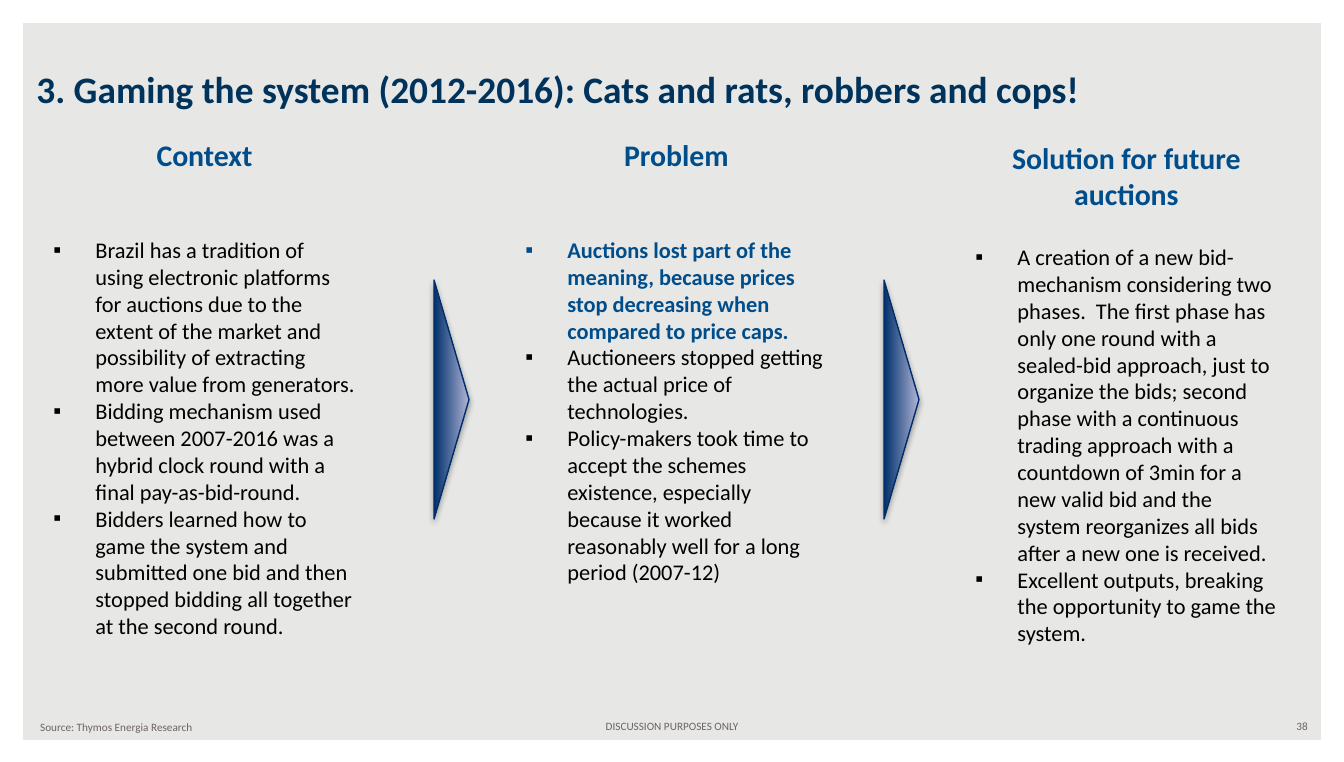
import dataclasses

import lxml.etree
import pptx
import pptx.dml.color
import pptx.enum.dml
import pptx.enum.shapes
import pptx.enum.text
import pptx.oxml.ns
import pptx.util

ALIGN = pptx.enum.text.PP_ALIGN
ANCHOR = pptx.enum.text.MSO_ANCHOR
EMU_PER_PX = 914400 / 134.4


@dataclasses.dataclass(frozen=True)
class Theme:
    font: str = "Calibri"
    background: str = "E7E7E5"
    frame: str = "FFFFFF"
    title: str = "00335C"
    accent: str = "004D8B"
    text: str = "000000"
    footer: str = "6C6463"
    arrow_dark: str = "002F6C"
    arrow_light: str = "AFB5D5"
    arrow_line: str = "002E6A"
    title_size: int = 20
    heading_size: int = 16
    list_size: int = 12
    footer_size: int = 6


THEME = Theme()
LIST_INDENT = 42

# heading, box, points between heading and list, bullets as (wording, emphasised)
COLUMNS = [
    ("Context", (40, 130, 329, 520), 34, [
        ("Brazil has a tradition of using electronic platforms for auctions due to the extent of "
         "the market and possibility of extracting more value from generators.", False),
        ("Bidding mechanism used between 2007-2016 was a hybrid clock round with a final "
         "pay-as-bid-round.", False),
        ("Bidders learned how to game the system and submitted one bid and then stopped bidding "
         "all together at the second round.", False),
    ]),
    ("Problem", (512, 130, 329, 466), 34, [
        ("Auctions lost part of the meaning, because prices stop decreasing when compared to "
         "price caps.", True),
        ("Auctioneers stopped getting the actual price of technologies.", False),
        ("Policy-makers took time to accept the schemes existence, especially because it worked "
         "reasonably well for a long period (2007-12)", False),
    ]),
    ("Solution for future auctions", (962, 133, 329, 524), 17, [
        ("A creation of a new bid-mechanism considering two phases.  The first phase has only one "
         "round with a sealed-bid approach, just to organize the bids; second phase with a "
         "continuous trading approach with a countdown of 3min for a new valid bid and the system "
         "reorganizes all bids after a new one is received.", False),
        ("Excellent outputs, breaking the opportunity to game the system.", False),
    ]),
]

FOOTERS = [
    ("Source: Thymos Energia Research", (27, 714, 426, 27), ALIGN.LEFT),
    ("DISCUSSION PURPOSES ONLY", (459, 713, 426, 27), ALIGN.CENTER),
    ("38", (1008, 713, 313, 27), ALIGN.RIGHT),
]


def px(length):
    return pptx.util.Emu(round(length * EMU_PER_PX))


def rgb(code):
    return pptx.dml.color.RGBColor.from_string(code)


def apply(target, formats):
    for name, value in formats.items():
        setattr(target, name, value)


def place(shape, box):
    apply(shape, dict(zip(("left", "top", "width", "height"), map(px, box))))


def write(paragraph, wording, size, color, bold=False, align=ALIGN.LEFT, space_before=0):
    run = paragraph.add_run()
    run.text = wording
    apply(paragraph, {"alignment": align, "space_before": pptx.util.Pt(space_before)})
    apply(run.font, {"name": THEME.font, "size": pptx.util.Pt(size), "bold": bold})
    run.font.color.rgb = rgb(color)


def set_frame(text_frame, anchor):
    apply(text_frame, {"word_wrap": True, "vertical_anchor": anchor,
                       "auto_size": pptx.enum.text.MSO_AUTO_SIZE.NONE})


def set_bullet(paragraph, character=None):
    """Give the paragraph a hanging bullet, or none when no character is given."""
    indent = px(LIST_INDENT) if character else 0
    properties = paragraph._p.get_or_add_pPr()
    properties.set("marL", str(indent))
    properties.set("indent", str(-indent))
    tag = "a:buChar" if character else "a:buNone"
    bullet = lxml.etree.SubElement(properties, pptx.oxml.ns.qn(tag))
    if character:
        bullet.set("char", character)


def add_border(slide, box):
    border = slide.shapes.add_shape(pptx.enum.shapes.MSO_SHAPE.FRAME, *map(px, box))
    border.adjustments[0] = 0.03
    border.shadow.inherit = False
    border.fill.solid()
    border.fill.fore_color.rgb = rgb(THEME.frame)
    border.line.fill.background()


def fill_title(title, box, wording):
    place(title, box)
    set_frame(title.text_frame, ANCHOR.BOTTOM)
    write(title.text_frame.paragraphs[0], wording, THEME.title_size, THEME.title, bold=True)


def fill_column(body, box, heading, gap, bullets):
    place(body, box)
    frame = body.text_frame
    set_frame(frame, ANCHOR.TOP)
    set_bullet(frame.paragraphs[0])
    write(frame.paragraphs[0], heading, THEME.heading_size, THEME.accent, True, ALIGN.CENTER)
    for index, (wording, emphasised) in enumerate(bullets):
        paragraph = frame.add_paragraph()
        set_bullet(paragraph, "▪")
        write(paragraph, wording, THEME.list_size, THEME.accent if emphasised else THEME.text,
              emphasised, space_before=0 if index else gap)


def add_arrow(slide, box):
    """Add a right-pointing triangle that fills the box once it is turned."""
    left, top, width, height = box
    shift = (height - width) / 2
    arrow = slide.shapes.add_shape(
        pptx.enum.shapes.MSO_SHAPE.ISOSCELES_TRIANGLE,
        *map(px, (left - shift, top + shift, height, width)))
    arrow.rotation = 90
    arrow.fill.gradient()
    arrow.fill.gradient_angle = 90
    for stop, color in zip(arrow.fill.gradient_stops, (THEME.arrow_dark, THEME.arrow_light)):
        stop.color.rgb = rgb(color)
    arrow.line.color.rgb = rgb(THEME.arrow_line)
    arrow.line.width = pptx.util.Pt(0.75)
    arrow.shadow.inherit = False
    effects = arrow._element.spPr.find(pptx.oxml.ns.qn("a:effectLst"))
    effects.append(pptx.oxml.parse_xml(
        f'<a:outerShdw {pptx.oxml.ns.nsdecls("a")} blurRad="{pptx.util.Pt(3.1)}" '
        f'dist="{pptx.util.Pt(1.8)}" dir="5400000" rotWithShape="0">'
        '<a:srgbClr val="000000"><a:alpha val="35000"/></a:srgbClr></a:outerShdw>'))


def add_footer(slide, box, wording, align):
    footer = slide.shapes.add_textbox(*map(px, box))
    set_frame(footer.text_frame, ANCHOR.MIDDLE)
    write(footer.text_frame.paragraphs[0], wording, THEME.footer_size, THEME.footer, align=align)


def main():
    deck = pptx.Presentation()
    apply(deck, {"slide_width": px(1344), "slide_height": px(762)})
    slide = deck.slides.add_slide(deck.slide_layouts.get_by_name("Comparison"))
    slide.background.fill.solid()
    slide.background.fill.fore_color.rgb = rgb(THEME.background)

    add_border(slide, (0, 0, 1344, 763))
    fill_title(slide.shapes.title, (23, 15, 1277, 103),
               "3. Gaming the system (2012-2016): Cats and rats, robbers and cops!")
    *bodies, spare = list(slide.placeholders)[1:]
    spare._element.getparent().remove(spare._element)
    for body, (heading, box, gap, bullets) in zip(bodies, COLUMNS):
        fill_column(body, box, heading, gap, bullets)
    for left in (434, 884):
        add_arrow(slide, (left, 280, 35, 239))
    for wording, box, align in FOOTERS:
        add_footer(slide, box, wording, align)
    deck.save("out.pptx")


if __name__ == "__main__":
    main()
